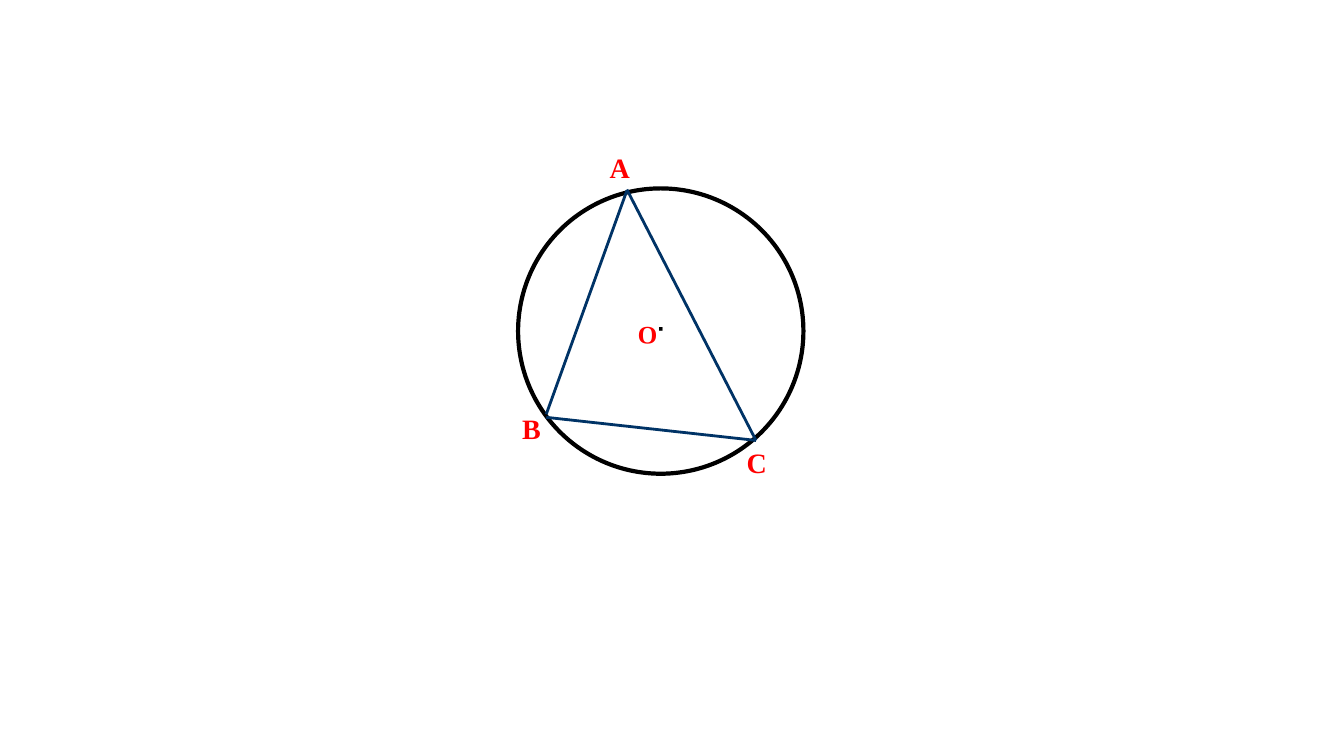
from lxml import etree
from pptx import Presentation
from pptx import util as u
from pptx.dml.color import RGBColor
from pptx.enum import shapes, text
from pptx.oxml import ns

COLORS = {"circle": "000000", "side": "003366", "label": "FF0000", "dot": "000000"}
SERIF = "Times New Roman"


def add_label(left, top, width, height, spans, rotation=0):
    box = page.shapes.add_textbox(u.Pt(left), u.Pt(top), u.Pt(width), u.Pt(height))
    box.rotation = rotation
    frame = box.text_frame
    frame.word_wrap = False
    frame.auto_size = text.MSO_AUTO_SIZE.SHAPE_TO_FIT_TEXT
    para = frame.paragraphs[0]
    for letter, font, size, color in spans:
        span = para.add_run()
        span.text = letter
        for name, value in {"name": font, "size": u.Pt(size), "bold": True}.items():
            setattr(span.font, name, value)
        span.font.color.rgb = RGBColor.from_string(COLORS[color])


deck = Presentation()
deck.slide_width = u.Pt(960)
deck.slide_height = u.Pt(540)
page = deck.slides.add_slide(deck.slide_layouts[6])

for letter, left, top in [("C", 526.3, 314.6), ("A", 428.4, 103.7), ("B", 365.8, 290.2)]:
    add_label(left, top, 28.8, 31.2, [(letter, SERIF, 20, "label")])

center_spans = [(".", "Arial", 18, "dot"), ("O", SERIF, 18, "label")]
add_label(447.8, 226.8, 33.8, 28.8, center_spans, rotation=180)

circle = page.shapes.add_shape(
    shapes.MSO_SHAPE.OVAL, u.Pt(370.1), u.Pt(134.6), u.Pt(203.8), u.Pt(203.8)
)
circle.shadow.inherit = False
circle.fill.background()
circle.line.width = u.Pt(3)
circle.line.color.rgb = RGBColor.from_string(COLORS["circle"])

sides = [
    (447.8, 136.1, 390.2, 295.9),
    (447.8, 135.4, 540, 314.6),
    (540, 314.6, 390.2, 298.1),
]
for ends in sides:
    side = page.shapes.add_connector(
        shapes.MSO_CONNECTOR.STRAIGHT, *[u.Pt(value) for value in ends]
    )
    side.line.width = u.Pt(2)
    side.line.color.rgb = RGBColor.from_string(COLORS["side"])
    etree.SubElement(side._element.spPr, ns.qn("a:effectLst"))

deck.save("out.pptx")
